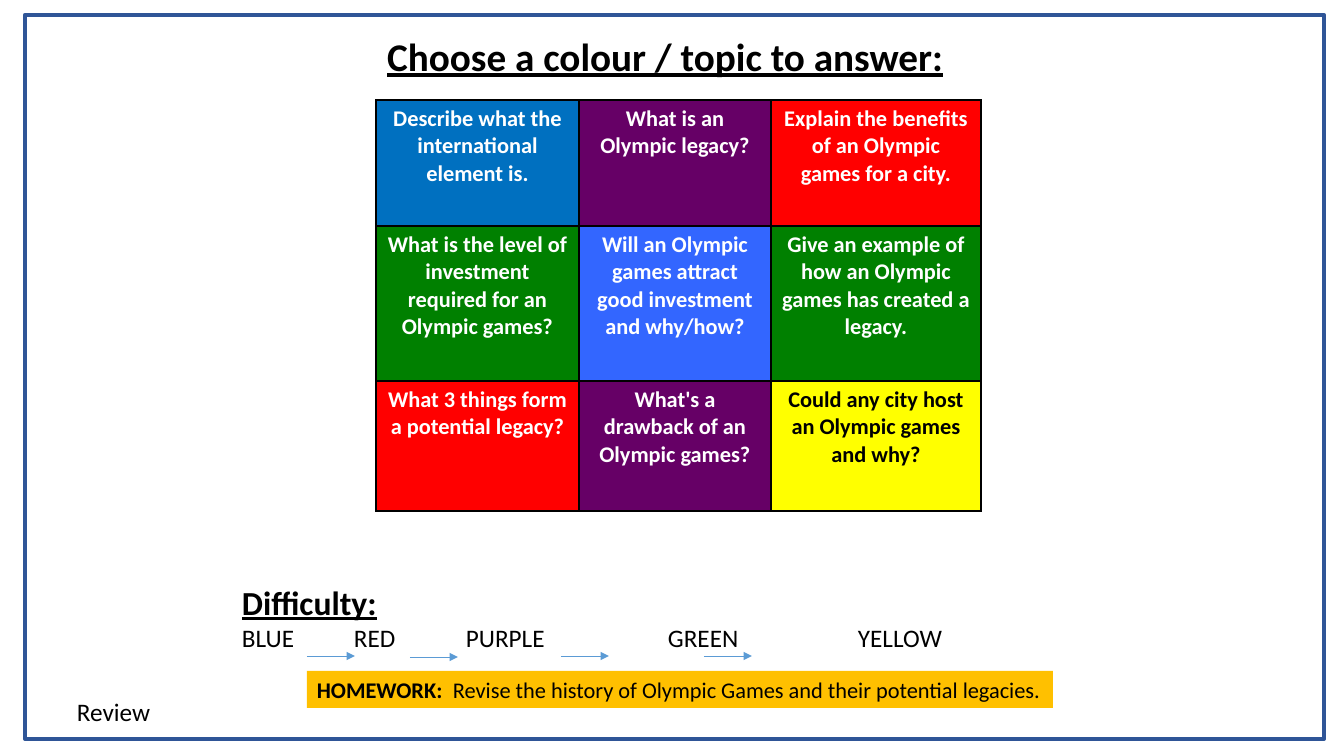
from lxml.etree import SubElement
from pptx import Presentation
from pptx.dml.color import RGBColor as Rgb
from pptx.enum.shapes import MSO_CONNECTOR as Conn, MSO_SHAPE as Shape
from pptx.enum.text import MSO_ANCHOR as Anchor, PP_ALIGN as Align
from pptx.oxml import parse_xml
from pptx.oxml.ns import nsdecls, qn
from pptx.util import Emu, Pt

# Content
INK = {
    "black": "000000", "white": "FFFFFF", "frame": "2F5597", "arrow": "5B9BD5",
    "gold": "FFC000", "blue": "0070C0", "sky": "3366FF", "purple": "660066",
    "red": "FF0000", "green": "008000", "yellow": "FFFF00",
}
TITLE = "Choose a colour / topic to answer:"
GRID = [
    [("blue", "Describe what the international element is."),
     ("purple", "What is an Olympic legacy?"),
     ("red", "Explain the benefits of an Olympic games for a city.")],
    [("green", "What is the level of investment required for an Olympic games?"),
     ("sky", "Will an Olympic games attract good investment and why/how?"),
     ("green", "Give an example of how an Olympic games has created a legacy.")],
    [("red", "What 3 things form a potential legacy?"),
     ("purple", "What's a drawback of an Olympic games?"),
     ("yellow", "Could any city host an Olympic games and why?")],
]
LEVELS = ["BLUE", "RED", "PURPLE", "GREEN", "YELLOW"]
TASK = "Revise the history of Olympic Games and their potential legacies."

# Layout in px
WIDTHS, HEIGHTS = [203, 192, 210], [126, 155, 130]
STOPS = [112, 224, 426, 616]
ARROWS = [(307, 656), (410, 657), (561, 656), (704, 656)]
REACH = 48


def px(n):
    return Emu(round(n * 914400 / 100.8))


def paint(fill, ink):
    fill.solid()
    fill.fore_color.rgb = Rgb.from_string(INK[ink])


def write(para, text, size=18, ink="black", bold=False, under=False, align=Align.LEFT):
    para.alignment = align
    run = para.add_run()
    run.text = text
    font = run.font
    font.name, font.size, font.bold, font.underline = "Calibri", Pt(size), bold, under
    paint(font.fill, ink)


def tabs(para, stops):
    group = SubElement(para._p.get_or_add_pPr(), qn("a:tabLst"))
    for stop in stops:
        SubElement(group, qn("a:tab"), pos=str(px(stop)), algn="l")


def box(slide, *place):
    frame = slide.shapes.add_textbox(*map(px, place)).text_frame
    frame.word_wrap = True
    return frame


def rect(slide, *place):
    shape = slide.shapes.add_shape(Shape.RECTANGLE, *map(px, place))
    shape.shadow.inherit = False
    return shape


def edge(cell):
    props = cell._tc.get_or_add_tcPr()
    for i, side in enumerate("LRTB"):
        props.insert(i, parse_xml(
            f'<a:ln{side} {nsdecls("a")} w="{Pt(1)}"><a:solidFill>'
            f'<a:srgbClr val="{INK["black"]}"/></a:solidFill></a:ln{side}>'))


def arrow(slide, x, y):
    link = slide.shapes.add_connector(Conn.STRAIGHT, px(x), px(y), px(x + REACH), px(y))
    paint(link.line.fill, "arrow")
    link.line.width = Pt(0.5)
    SubElement(link.line._get_or_add_ln(), qn("a:tailEnd"), type="triangle")
    SubElement(link._element.spPr, qn("a:effectLst"))


def main():
    deck = Presentation()
    deck.slide_width, deck.slide_height = px(1344), px(756)
    slide = deck.slides.add_slide(deck.slide_layouts[6])

    # Frame and footer
    frame = rect(slide, 25, 15, 1299, 724)
    frame.fill.background()
    paint(frame.line.fill, "frame")
    frame.line.width = Pt(3)
    write(box(slide, 67, 691, 790, 40).paragraphs[0], "Review")

    # Question grid
    place = map(px, (376, 100, sum(WIDTHS), sum(HEIGHTS)))
    table = slide.shapes.add_table(len(HEIGHTS), len(WIDTHS), *place).table
    table.first_row = table.horz_banding = False
    for col, width in zip(table.columns, WIDTHS):
        col.width = px(width)
    for r, line in enumerate(GRID):
        table.rows[r].height = px(HEIGHTS[r])
        for c, (tint, text) in enumerate(line):
            cell = table.cell(r, c)
            paint(cell.fill, tint)
            edge(cell)
            ink = "black" if tint == "yellow" else "white"
            write(cell.text_frame.paragraphs[0], text, size=16, ink=ink,
                  bold=True, align=Align.CENTER)

    # Title
    write(box(slide, 232, 27, 866, 57).paragraphs[0], TITLE, size=28,
          bold=True, under=True, align=Align.CENTER)

    # Difficulty scale
    scale = box(slide, 232, 577, 824, 82)
    write(scale.paragraphs[0], "Difficulty:", size=24, bold=True, under=True)
    para = scale.add_paragraph()
    write(para, "\t".join(LEVELS))
    tabs(para, STOPS)
    for spot in ARROWS:
        arrow(slide, *spot)

    # Homework
    bar = rect(slide, 307, 671, 746, 37)
    paint(bar.fill, "gold")
    bar.line.fill.background()
    bar.text_frame.word_wrap = True
    bar.text_frame.vertical_anchor = Anchor.TOP
    para = bar.text_frame.paragraphs[0]
    write(para, "HOMEWORK:", size=16, bold=True)
    write(para, "\t" + TASK, size=16)
    tabs(para, [136])

    deck.save("out.pptx")


if __name__ == "__main__":
    main()
